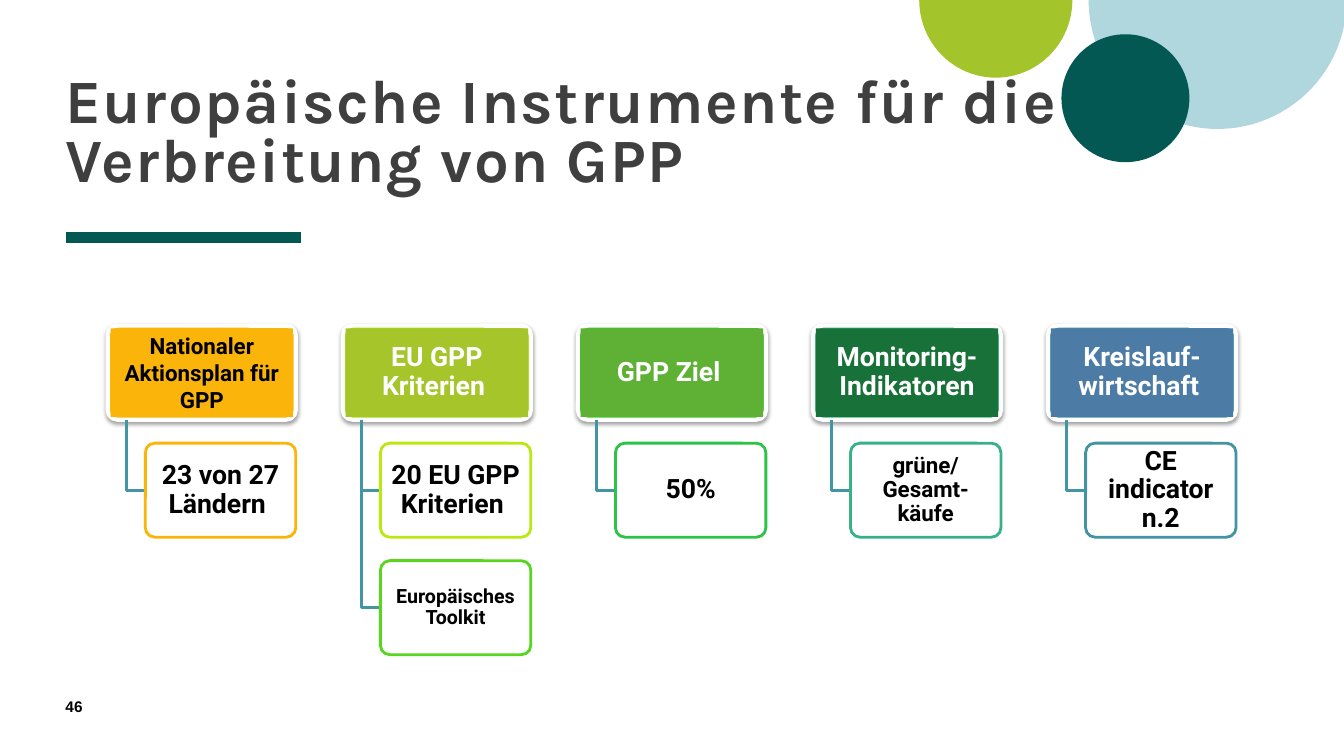
from dataclasses import dataclass

from lxml import etree
from pptx import Presentation
from pptx.dml.color import RGBColor
from pptx.enum import shapes, text
from pptx.oxml import ns
from pptx.util import Pt

WHITE = RGBColor(0xFF, 0xFF, 0xFF)
BLACK = RGBColor(0x00, 0x00, 0x00)
CHARCOAL = RGBColor(0x3F, 0x3F, 0x3F)
PETROL = RGBColor(0x03, 0x58, 0x54)
SKY = RGBColor(0xAF, 0xD7, 0xDD)
LIME = RGBColor(0xA3, 0xC4, 0x2A)
TEAL = RGBColor(0x42, 0x95, 0xA2)
AMBER = RGBColor(0xFB, 0xB5, 0x0A)
GOLD = RGBColor(0xFA, 0xB5, 0x06)
OLIVE = RGBColor(0xA5, 0xC5, 0x2A)
BRIGHT_LIME = RGBColor(0xA0, 0xE3, 0x16)
YELLOW_LIME = RGBColor(0xBC, 0xE8, 0x12)
GRASS = RGBColor(0x59, 0xD5, 0x20)
LEAF = RGBColor(0x5F, 0xB1, 0x35)
BRIGHT_GREEN = RGBColor(0x32, 0xCC, 0x26)
EMERALD = RGBColor(0x2C, 0xC3, 0x46)
FOREST = RGBColor(0x18, 0x71, 0x38)
JADE = RGBColor(0x35, 0xB5, 0x79)
MINT = RGBColor(0x38, 0xB1, 0x87)
STEEL = RGBColor(0x4C, 0x7B, 0xA5)
LAGOON = RGBColor(0x43, 0x93, 0xA0)

ROUND = shapes.MSO_SHAPE.ROUNDED_RECTANGLE


@dataclass
class Heading:
    words: str
    fill: RGBColor
    frame: RGBColor
    size: float = 19
    color: RGBColor = WHITE
    spacing: float = 0.9


@dataclass
class Detail:
    words: str
    line: RGBColor
    size: float = 19


COLUMNS = [
    (Heading("Nationaler Aktionsplan für GPP", AMBER, GOLD, 16, BLACK, 1.0),
     [Detail("23 von 27 Ländern ", AMBER)]),
    (Heading("EU GPP Kriterien ", OLIVE, BRIGHT_LIME),
     [Detail("20 EU GPP Kriterien ", YELLOW_LIME),
      Detail("Europäisches Toolkit", GRASS, 14)]),
    (Heading("GPP Ziel ", LEAF, BRIGHT_GREEN), [Detail("50%", EMERALD)]),
    (Heading("Monitoring- Indikatoren", FOREST, JADE),
     [Detail("grüne/\nGesamt-käufe", MINT, 16)]),
    (Heading("Kreislauf-wirtschaft ", STEEL, LAGOON),
     [Detail("CE indicator n.2", LAGOON)]),
]


def write(shape, words, *, size, font="Roboto", color=BLACK, spacing=0.9, tracking=0,
          align=text.PP_ALIGN.CENTER, anchor=text.MSO_ANCHOR.MIDDLE, insets=(2.7, 1.8)):
    frame = shape.text_frame
    frame.text = words
    frame.word_wrap = True
    frame.auto_size = text.MSO_AUTO_SIZE.NONE
    frame.vertical_anchor = anchor
    frame.margin_left = frame.margin_right = Pt(insets[0])
    frame.margin_top = frame.margin_bottom = Pt(insets[1])
    for para in frame.paragraphs:
        para.alignment = align
        para.line_spacing = spacing
        para.space_before = para.space_after = Pt(0)
        for span in para.runs:
            span.font.name = font
            span.font.size = Pt(size)
            span.font.bold = True
            span.font.color.rgb = color
            if tracking:
                span.font._element.set("spc", str(tracking * 100))


def add_box(page, kind, left, top, width, height, *, fill, line=None, line_width=2):
    box = page.shapes.add_shape(kind, Pt(left), Pt(top), Pt(width), Pt(height))
    box.shadow.inherit = False
    box.fill.solid()
    box.fill.fore_color.rgb = fill
    if line is None:
        box.line.fill.background()
    else:
        box.line.color.rgb = line
        box.line.width = Pt(line_width)
    if kind == ROUND:
        box.adjustments[0] = 0.1
    return box


def add_opacity(fill_parent, percent):
    color = fill_parent.find(".//" + ns.qn("a:srgbClr"))
    etree.SubElement(color, ns.qn("a:alpha"), val=str(percent * 1000))


def add_shadow(box):
    effects = box._element.spPr.find(ns.qn("a:effectLst"))
    shadow = etree.SubElement(effects, ns.qn("a:outerShdw"), blurRad=str(Pt(3.1)),
                              dist=str(Pt(1.6)), dir="5400000", rotWithShape="0")
    etree.SubElement(shadow, ns.qn("a:srgbClr"), val=str(BLACK))
    add_opacity(shadow, 37)


def add_elbow(page, left, top, width, height):
    builder = page.shapes.build_freeform(Pt(left), Pt(top))
    builder.add_line_segments([(Pt(left), Pt(top + height)),
                               (Pt(left + width), Pt(top + height))], close=False)
    elbow = builder.convert_to_shape()
    elbow.shadow.inherit = False
    elbow.fill.background()
    elbow.line.color.rgb = TEAL
    elbow.line.width = Pt(2)


def add_circles(page, right):
    half_circles = [(right - 182.4, -92.2, 184.3, 184.3, SKY),
                    (right - 303.4, -55.4, 109.4, 110.9, LIME)]
    for left, top, width, height, color in half_circles:
        half = add_box(page, shapes.MSO_SHAPE.PIE, left, top, width, height, fill=color)
        half.adjustments[0] = 0
        half.adjustments[1] = 108
    add_box(page, shapes.MSO_SHAPE.OVAL, right - 201.8, 24.5, 91.4, 91.4, fill=PETROL)


def add_header(page, left, top, width, height):
    title = page.shapes.title
    title.left, title.top, title.width, title.height = map(Pt, (left, top, width, height))
    write(title, "Europäische Instrumente für die Verbreitung von GPP", size=44, font="Karla",
          color=CHARCOAL, spacing=0.8, tracking=1, align=text.PP_ALIGN.LEFT,
          anchor=text.MSO_ANCHOR.BOTTOM, insets=(0, 0))
    rule_top = Pt(top + height + 30.5)
    rule = page.shapes.add_connector(shapes.MSO_CONNECTOR.STRAIGHT, Pt(left), rule_top,
                                     Pt(left + 168), rule_top)
    rule.line.color.rgb = PETROL
    rule.line.width = Pt(8)
    etree.SubElement(rule._element.spPr, ns.qn("a:effectLst"))


def add_column(page, left, top, width, heading, details):
    height = width / 2
    indent = width / 5
    step = height * 1.25
    card = add_box(page, ROUND, left, top, width, height,
                   fill=heading.frame, line=WHITE, line_width=3)
    add_shadow(card)
    label = add_box(page, shapes.MSO_SHAPE.RECTANGLE, left + 2, top + 2,
                    width - 4, height - 4, fill=heading.fill)
    write(label, heading.words, size=heading.size, color=heading.color,
          spacing=heading.spacing)
    for number, detail in enumerate(details, 1):
        add_elbow(page, left + indent / 2, top + height, indent / 2,
                  number * step - height / 2)
        box = add_box(page, ROUND, left + indent, top + number * step,
                      width - indent, height, fill=WHITE, line=detail.line)
        add_opacity(box._element.spPr.find(ns.qn("a:solidFill")), 89)
        write(box, detail.words, size=detail.size)


def add_page_number(page, left, top, width, height):
    box = page.shapes.add_textbox(Pt(left), Pt(top), Pt(width), Pt(height))
    write(box, "46", size=11, font="Arial", spacing=1.0, align=text.PP_ALIGN.LEFT,
          anchor=text.MSO_ANCHOR.TOP, insets=(0, 0))


def main():
    deck = Presentation()
    deck.slide_width, deck.slide_height = Pt(960), Pt(540)
    page = deck.slides.add_slide(deck.slide_layouts[5])
    add_circles(page, 960)
    add_header(page, 46.8, 21.6, 769.7, 117.4)
    for index, (heading, details) in enumerate(COLUMNS):
        add_column(page, 77 + index * 167.9, 232.6, 134.3, heading, details)
    add_page_number(page, 46.8, 498.2, 41, 19.4)
    deck.save("out.pptx")


if __name__ == "__main__":
    main()
